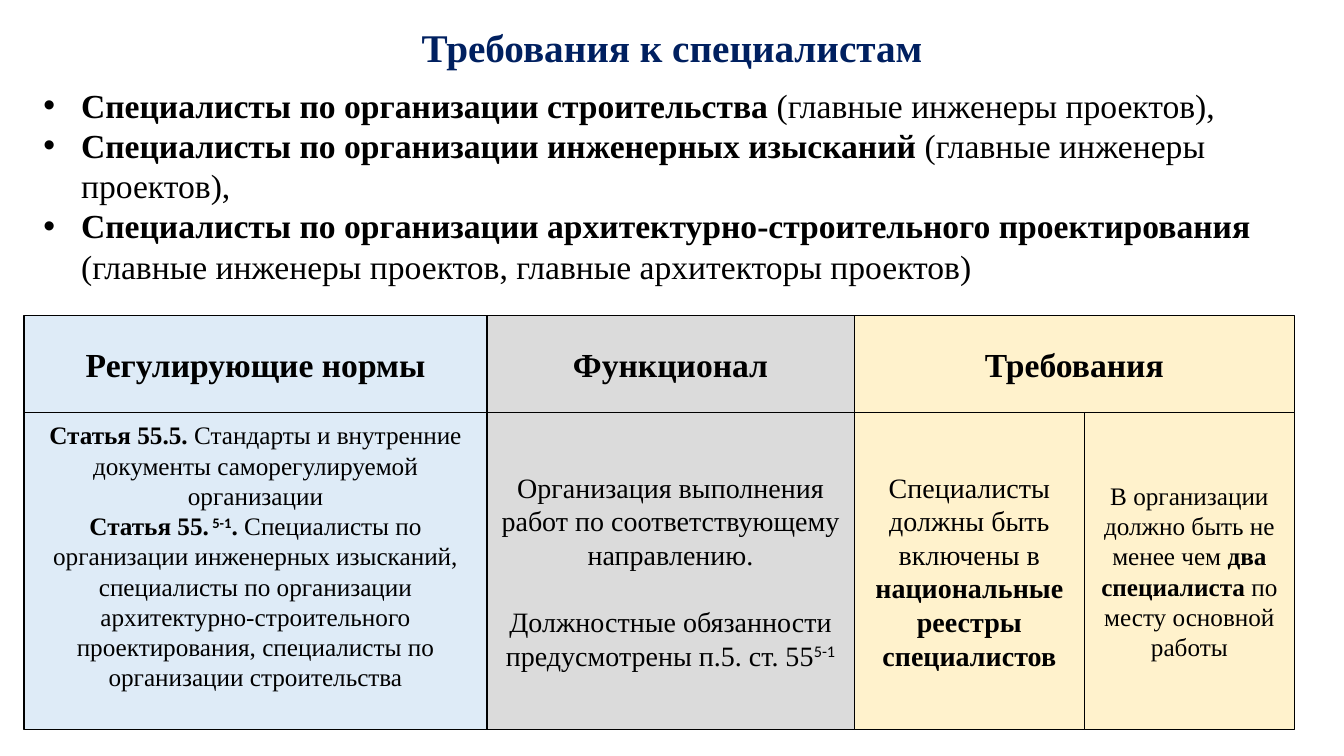
from pptx import Presentation
from pptx.dml.color import RGBColor
from pptx.enum.shapes import MSO_SHAPE
from pptx.enum.text import MSO_ANCHOR, MSO_AUTO_SIZE, PP_ALIGN
from pptx.util import Cm, Pt

RECTANGLE = MSO_SHAPE.RECTANGLE
MIDDLE, TOP, BOTTOM = MSO_ANCHOR.MIDDLE, MSO_ANCHOR.TOP, MSO_ANCHOR.BOTTOM
CENTER, LEFT = PP_ALIGN.CENTER, PP_ALIGN.LEFT
NO_FIT = MSO_AUTO_SIZE.NONE

COLORS = {"title": "002060", "text": "000000", "norms": "DEEBF7",
          "functions": "DBDBDB", "requirements": "FFF2CC"}

# Column edges and row edges of the grid, in cm
COLUMNS = [0.61, 12.27, 21.53, 27.33, 32.62]
ROWS = [7.95, 10.39, 18.39]


class SlideBuilder:
    """Holds the style and the current slide. A text is a list of paragraphs;
    a paragraph is a list of (words, marks), with marks b = bold, s = superscript."""

    font = "Times New Roman"
    superscript_font = "Calibri"

    def __init__(self, page):
        self.page = page

    def color(self, name):
        return RGBColor.from_string(COLORS[name])

    def fill_text(self, frame, paragraphs, size, color="text", align=CENTER,
                  anchor=MIDDLE, line_spacing=1.0, gap=0):
        frame.word_wrap = True
        frame.auto_size = NO_FIT
        frame.vertical_anchor = anchor
        for index, spans in enumerate(paragraphs):
            para = frame.add_paragraph() if index else frame.paragraphs[0]
            para.alignment = align
            para.line_spacing = line_spacing
            para.space_before = Pt(gap if index else 0)
            para.font.name = self.font
            para.font.size = Pt(size)
            para.font.color.rgb = self.color(color)
            for words, marks in spans:
                span = para.add_run()
                span.text = words
                span.font.bold = "b" in marks
                if "s" in marks:
                    span.font.name = self.superscript_font
                    span._r.get_or_add_rPr().set("baseline", "30000")

    def place(self, shape, left, top, width, height):
        shape.left, shape.top = Cm(left), Cm(top)
        shape.width, shape.height = Cm(width), Cm(height)

    def title(self, words, box):
        shape = self.page.shapes.title
        self.place(shape, *box)
        self.fill_text(shape.text_frame, [[(words, "b")]], 28, "title",
                       anchor=BOTTOM, line_spacing=0.9)

    def bullets(self, paragraphs, box, size, indent):
        shape = self.page.placeholders[1]
        self.place(shape, *box)
        self.fill_text(shape.text_frame, paragraphs, size, align=LEFT, anchor=TOP)
        for para in shape.text_frame.paragraphs:
            properties = para._p.get_or_add_pPr()
            properties.set("marL", str(Cm(indent)))
            properties.set("indent", str(-Cm(indent)))

    def cell(self, row, first, last, fill, paragraphs, size, gap=0, bottom=0.13):
        left, top = COLUMNS[first], ROWS[row]
        box = self.page.shapes.add_shape(
            RECTANGLE, Cm(left), Cm(top),
            Cm(COLUMNS[last] - left), Cm(ROWS[row + 1] - top))
        box.shadow.inherit = False
        box.fill.solid()
        box.fill.fore_color.rgb = self.color(fill)
        box.line.color.rgb = self.color("text")
        box.line.width = Pt(1)
        box.text_frame.margin_bottom = Cm(bottom)
        self.fill_text(box.text_frame, paragraphs, size, gap=gap)


def main():
    deck = Presentation()
    deck.slide_width, deck.slide_height = Cm(33.87), Cm(19.05)
    slide = SlideBuilder(deck.slides.add_slide(deck.slide_layouts[1]))

    # Title and list of specialists
    slide.title("Требования к специалистам", (2.33, 0.71, 29.21, 1.2))
    specialists = [
        ("строительства", "(главные инженеры проектов),"),
        ("инженерных изысканий", "(главные инженеры проектов),"),
        ("архитектурно-строительного проектирования",
         "(главные инженеры проектов, главные архитекторы проектов)"),
    ]
    slide.bullets([[(f"Специалисты по организации {field} ", "b"), (posts, "")]
                   for field, posts in specialists],
                  (0.84, 2, 31.17, 6.4), size=24, indent=0.95)

    # Header row
    headers = [(0, 1, "norms", "Регулирующие нормы"),
               (1, 2, "functions", "Функционал"),
               (2, 4, "requirements", "Требования")]
    for first, last, fill, words in headers:
        slide.cell(0, first, last, fill, [[(words, "b")]], 24)

    # Content row
    slide.cell(1, 0, 1, "norms", [
        [("Статья 55.5. ", "b"),
         ("Стандарты и внутренние документы саморегулируемой организации", "")],
        [("Статья 55.", "b"), (" 5-1", "bs"), (". ", "b"),
         ("Специалисты по организации инженерных изысканий, специалисты по "
          "организации архитектурно-строительного проектирования, "
          "специалисты по организации строительства", "")],
    ], 18, bottom=0.89)
    slide.cell(1, 1, 2, "functions", [
        [("Организация выполнения работ по соответствующему направлению.", "")],
        [("Должностные обязанности предусмотрены п.5. ст. 55", ""), ("5-1", "s")],
    ], 20, gap=24)
    slide.cell(1, 2, 3, "requirements", [
        [("Специалисты должны быть включены в ", ""),
         ("национальные реестры специалистов", "b")],
    ], 20)
    slide.cell(1, 3, 4, "requirements", [
        [("В организации должно быть не менее чем ", ""),
         ("два специалиста ", "b"), ("по месту основной работы", "")],
    ], 18)

    deck.save("out.pptx")


if __name__ == "__main__":
    main()
